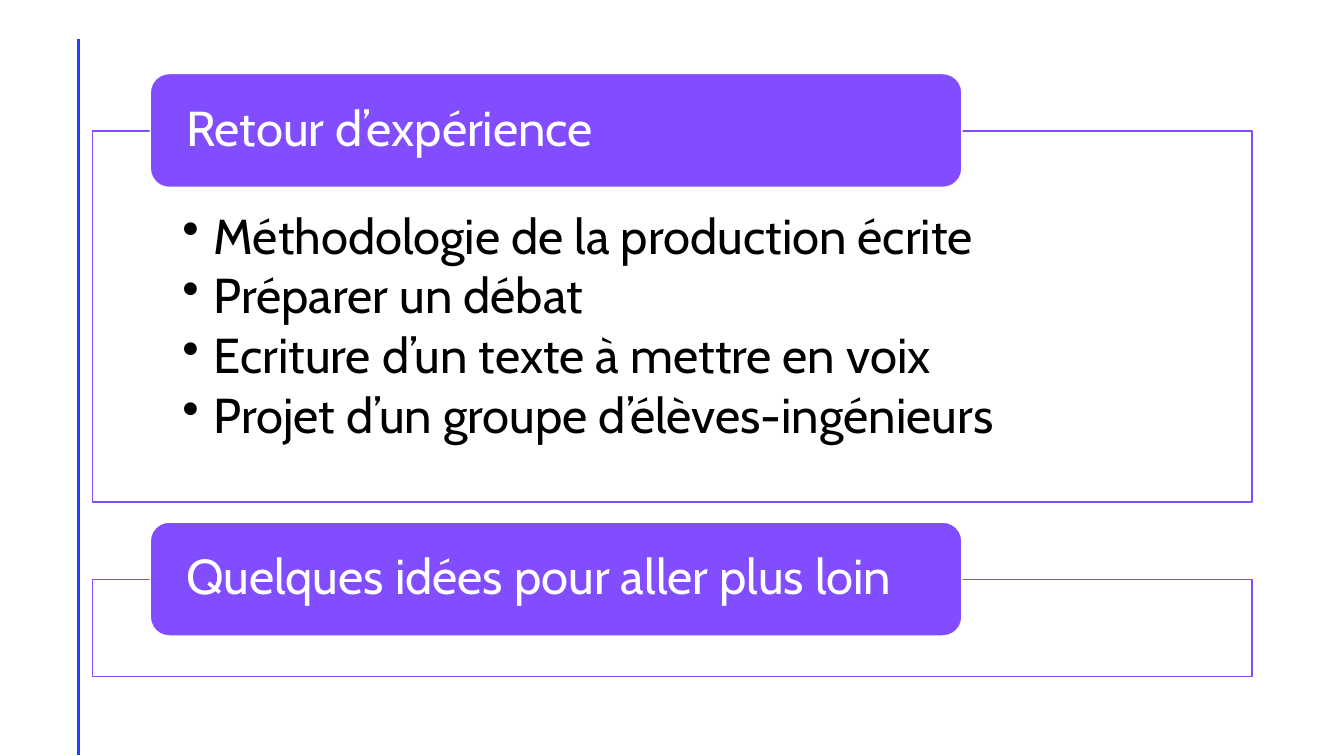
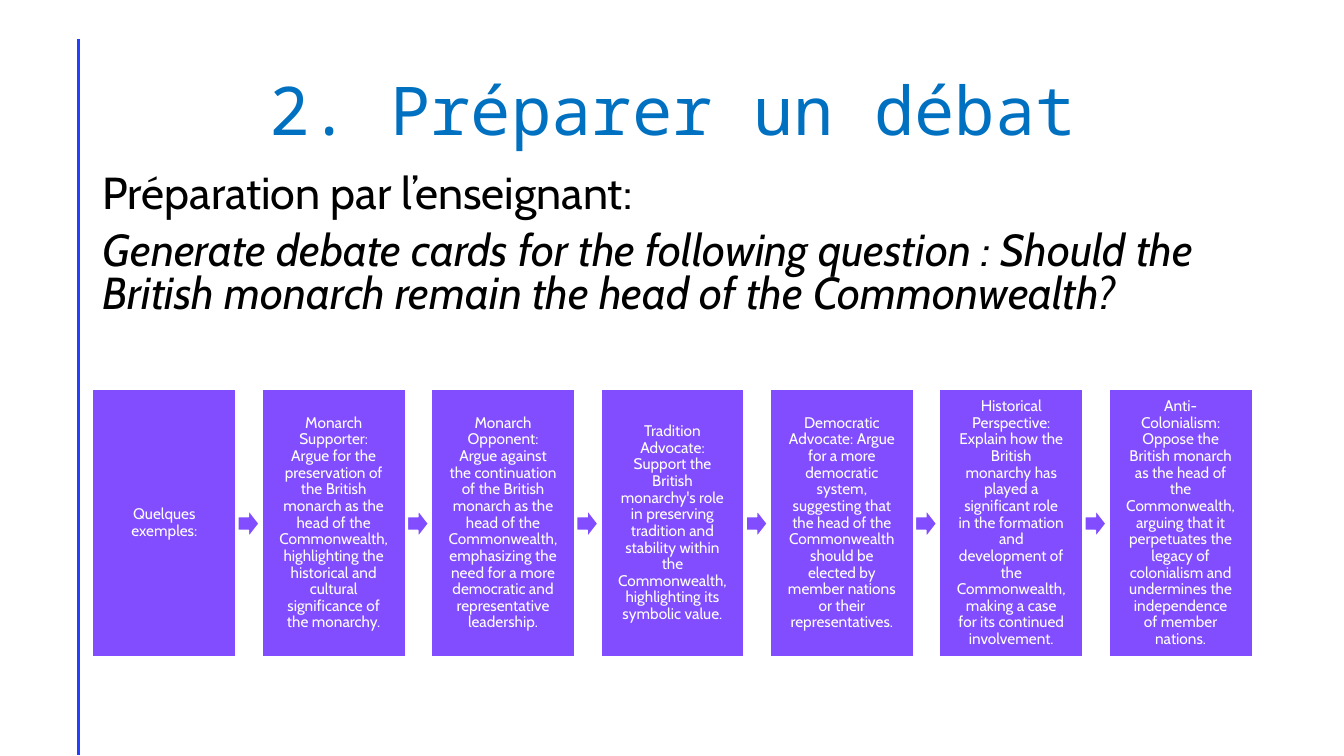
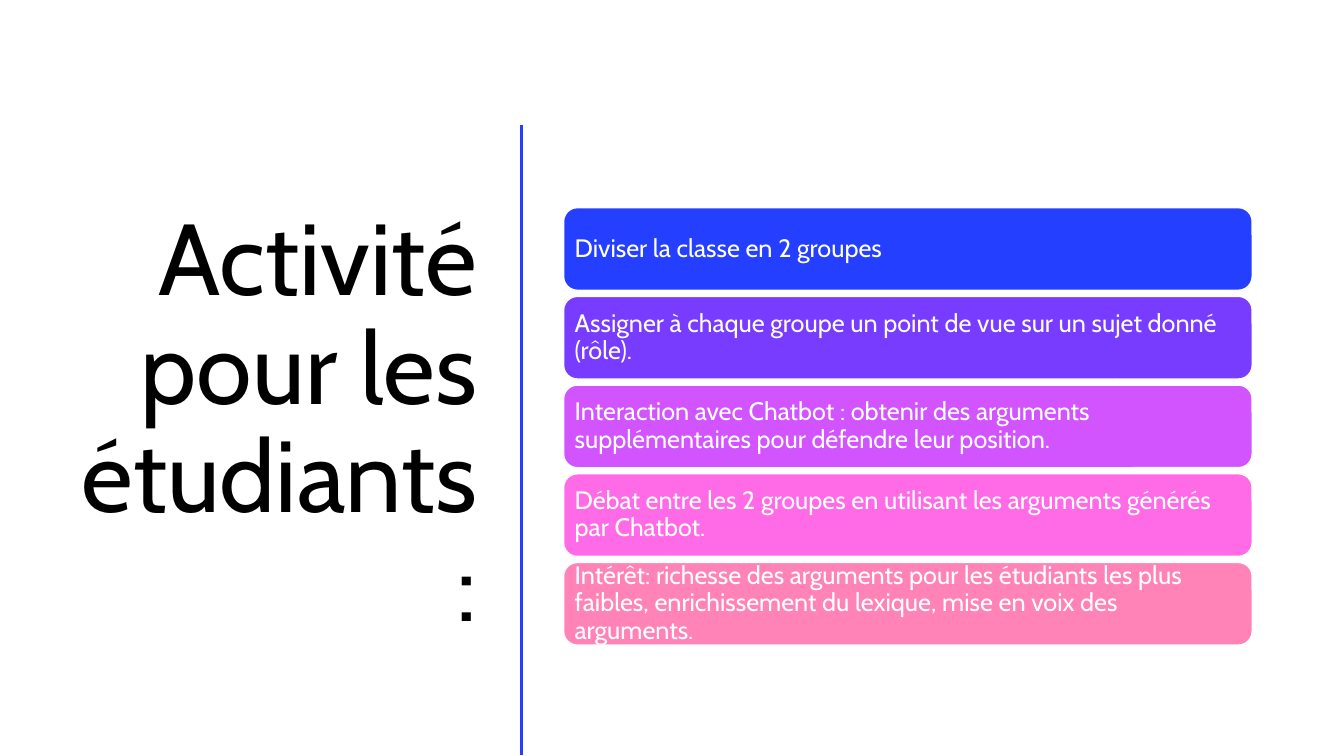
"""Builds three slides on classroom debate activities."""
from lxml import etree
from pptx import Presentation
from pptx.dml.color import RGBColor
from pptx.enum.shapes import MSO_CONNECTOR, MSO_SHAPE
from pptx.enum.text import MSO_ANCHOR as Anchor, MSO_AUTO_SIZE, PP_ALIGN as Align
from pptx.oxml.ns import qn
from pptx.util import Inches, Pt

COLORS = {
    "white": "FFFFFF",
    "black": "000000",
    "rule": "243FFF",
    "violet": "814DFF",
    "title": "0070C0",
}
STEP_COLORS = ["243FFF", "773CFF", "D154FF", "FF6BE7", "FF83B6"]
LEFT, WIDTH = 0.92, 11.5


def write(shape, lines, size, color="white", font="Cabin", align=Align.LEFT,
          anchor=Anchor.MIDDLE, insets=(0.1, 0.05, 0.1, 0.05), spacing=0.9):
    """Fill a shape with paragraphs in one style and return them."""
    frame = shape.text_frame
    frame.word_wrap = True
    frame.auto_size = MSO_AUTO_SIZE.NONE
    frame.vertical_anchor = anchor
    frame.margin_left, frame.margin_top, frame.margin_right, frame.margin_bottom = map(Inches, insets)
    for index, line in enumerate(lines):
        paragraph = frame.add_paragraph() if index else frame.paragraphs[0]
        paragraph.alignment = align
        paragraph.line_spacing = spacing
        run = paragraph.add_run()
        run.text = line
        run.font.name = font
        run.font.size = Pt(size)
        run.font.color.rgb = RGBColor.from_string(COLORS[color])
    return frame.paragraphs


def add_box(slide, kind, box, fill, line="FFFFFF"):
    """Add a filled preset shape with a thin outline."""
    shape = slide.shapes.add_shape(kind, *map(Inches, box))
    shape.shadow.inherit = False
    shape.fill.solid()
    shape.fill.fore_color.rgb = RGBColor.from_string(fill)
    shape.line.color.rgb = RGBColor.from_string(line)
    shape.line.width = Pt(1)
    return shape


presentation = Presentation()
presentation.slide_width = Inches(13.33)
presentation.slide_height = Inches(7.5)
title_only, blank = presentation.slide_layouts[5], presentation.slide_layouts[6]
slides = [presentation.slides.add_slide(layout) for layout in (blank, title_only, title_only)]
overview, debate, activity = slides

for slide, x, top in zip(slides, (0.78, 0.78, 5.17), (0.39, 0.39, 1.24)):
    rule = slide.shapes.add_connector(
        MSO_CONNECTOR.STRAIGHT, Inches(x), Inches(top), Inches(x), Inches(7.49))
    rule.line.color.rgb = RGBColor.from_string(COLORS["rule"])
    rule.line.width = Pt(2)
    etree.SubElement(rule.element.spPr, qn("a:effectLst"))

sections = [
    ("Retour d’expérience", 1.3, 3.68, [
        "Méthodologie de la production écrite",
        "Préparer un débat",
        "Ecriture d’un texte à mettre en voix",
        "Projet d’un groupe d’élèves-ingénieurs",
    ]),
    ("Quelques idées pour aller plus loin", 5.75, 0.96, []),
]
for heading, top, height, items in sections:
    panel = add_box(overview, MSO_SHAPE.RECTANGLE, (LEFT, top, WIDTH, height),
                    COLORS["white"], COLORS["violet"])
    if items:
        for paragraph in write(panel, items, 35, "black", anchor=Anchor.TOP,
                               insets=(0.89, 0.8, 0.89, 0.27)):
            paragraph.space_after = Pt(5)
            properties = paragraph._p.get_or_add_pPr()
            properties.set("marL", str(Inches(0.31)))
            properties.set("indent", str(Inches(-0.31)))
            etree.SubElement(properties, qn("a:buChar"), char="•")
    tab = add_box(overview, MSO_SHAPE.ROUNDED_RECTANGLE, (1.49, top - 0.57, 8.05, 1.13),
                  COLORS["violet"])
    write(tab, [heading], 35, insets=(0.3, 0, 0.3, 0))

titles = [
    (debate, (LEFT, 0.4, WIDTH, 1.45), "2. Préparer un débat", 48, "title", "Noto Sans Mono", Align.CENTER),
    (activity, (0.52, 1.17, 4.31, 6.11), "Activité pour les étudiants:", 72, "black", "Cabin", Align.RIGHT),
]
for slide, box, text, size, color, font, align in titles:
    title = slide.shapes.title
    title.left, title.top, title.width, title.height = map(Inches, box)
    write(title, [text], size, color, font, align)

cards = [
    "Quelques exemples:",
    "Monarch Supporter: Argue for the preservation of the British monarch as the head of the "
    "Commonwealth, highlighting the historical and cultural significance of the monarchy.",
    "Monarch Opponent: Argue against the continuation of the British monarch as the head of the "
    "Commonwealth, emphasizing the need for a more democratic and representative leadership.",
    "Tradition Advocate: Support the British monarchy's role in preserving tradition and stability "
    "within the Commonwealth, highlighting its symbolic value.",
    "Democratic Advocate: Argue for a more democratic system, suggesting that the head of the "
    "Commonwealth should be elected by member nations or their representatives.",
    "Historical Perspective: Explain how the British monarchy has played a significant role in the "
    "formation and development of the Commonwealth, making a case for its continued involvement.",
    "Anti-Colonialism: Oppose the British monarch as the head of the Commonwealth, arguing that it "
    "perpetuates the legacy of colonialism and undermines the independence of member nations.",
]
card_width = 1.42
card_pitch = (WIDTH - card_width) / (len(cards) - 1)
for index, text in enumerate(cards):
    left = LEFT + index * card_pitch
    if index:
        add_box(debate, MSO_SHAPE.RIGHT_ARROW, (left - 0.24, 5.06, 0.21, 0.27), COLORS["violet"])
    card = add_box(debate, MSO_SHAPE.RECTANGLE, (left, 3.86, card_width, 2.66), COLORS["violet"])
    write(card, [text], 11, align=Align.CENTER, insets=[0.17] * 4)

prompt = debate.shapes.add_textbox(Inches(LEFT), Inches(1.69), Inches(WIDTH), Inches(1.59))
prompt_lines = write(prompt, [
    "Préparation par l’enseignant:",
    "Generate debate cards for the following question : Should the British monarch remain "
    "the head of the Commonwealth?",
], 32, "black", anchor=Anchor.TOP, spacing=0.8)
for paragraph in prompt_lines:
    paragraph.space_before = Pt(10)
prompt_lines[1].runs[0].font.italic = True

steps = [
    "Diviser la classe en 2 groupes",
    "Assigner à chaque groupe un point de vue sur un sujet donné (rôle).",
    "Interaction avec Chatbot : obtenir des arguments supplémentaires pour défendre leur position.",
    "Débat entre les 2 groupes en utilisant les arguments générés par Chatbot.",
    "Intérêt: richesse des arguments pour les étudiants les plus faibles, enrichissement du lexique, "
    "mise en voix des arguments.",
]
for index, (text, color) in enumerate(zip(steps, STEP_COLORS)):
    step = add_box(activity, MSO_SHAPE.ROUNDED_RECTANGLE, (5.59, 2.06 + index * 0.88, 6.83, 0.82), color)
    write(step, [text], 18, insets=[0.07] * 4)

presentation.save("out.pptx")
